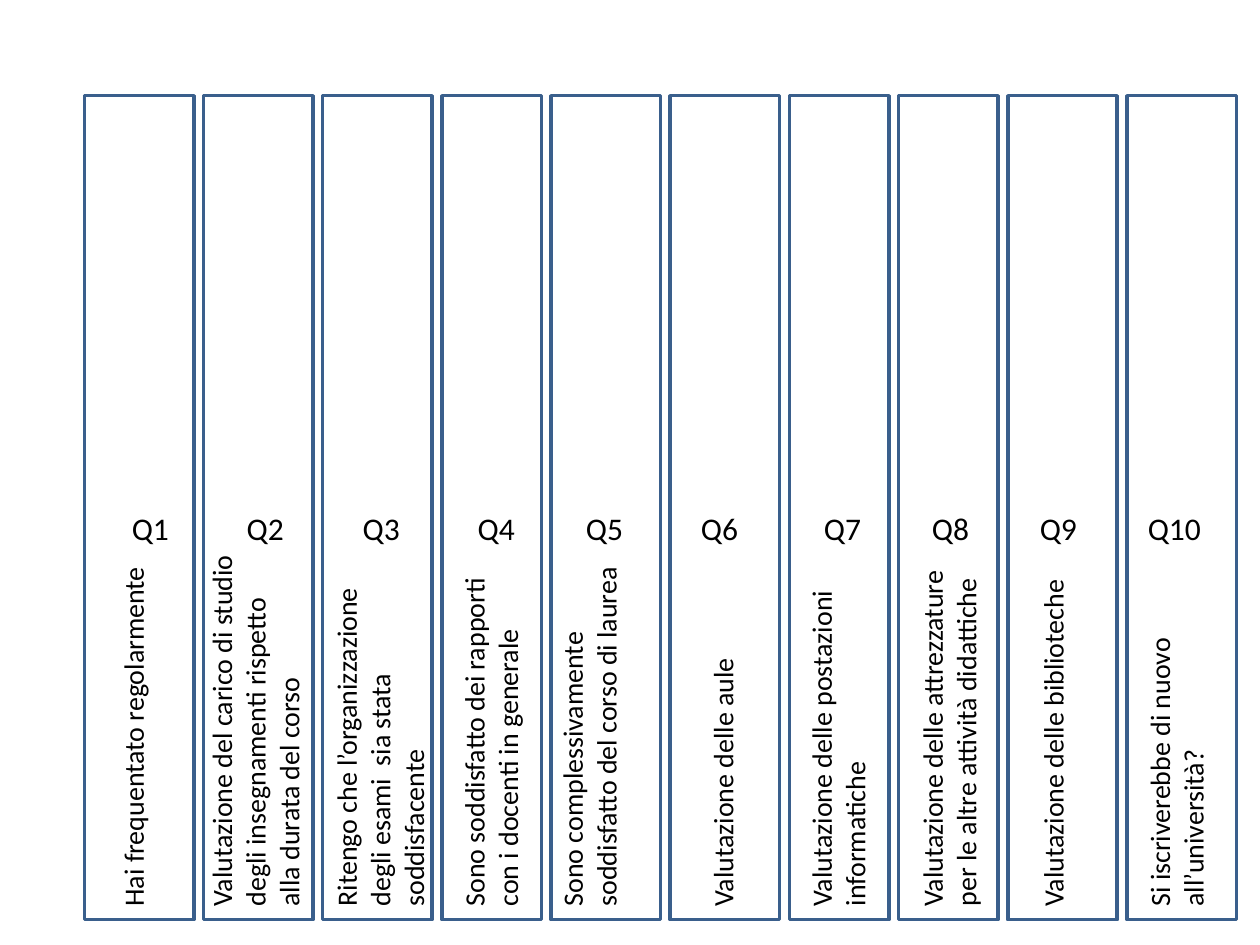
from dataclasses import dataclass

from lxml import etree
from pptx import Presentation
from pptx.dml.color import RGBColor
from pptx.enum.shapes import MSO_SHAPE
from pptx.enum.text import MSO_ANCHOR, PP_ALIGN
from pptx.oxml.ns import qn
from pptx.util import Pt

RECTANGLE = MSO_SHAPE.RECTANGLE
TOP, MIDDLE = MSO_ANCHOR.TOP, MSO_ANCHOR.MIDDLE
LEFT = PP_ALIGN.LEFT


@dataclass(frozen=True)
class Theme:
    font: str = "Calibri"
    text: RGBColor = RGBColor(0, 0, 0)
    paper: RGBColor = RGBColor(255, 255, 255)
    frame: RGBColor = RGBColor(0x3A, 0x5F, 0x8C)
    frame_width: float = 2
    question_size: float = 16
    code_size: float = 18
    line_height: float = 19.4
    inset: float = 7.2


THEME = Theme()
WIDE, NARROW, GAP = 62.6, 56.9, 5.5
COLUMNS_LEFT, COLUMNS_TOP, COLUMNS_HEIGHT = 48.2, 54.7, 470.9
CODES_TOP, CODES_HEIGHT = 287.3, 28.8
QUESTIONS_BOTTOM = 525

# column width, start of the code, question, lines, centre of the question, its length
COLUMNS = [
    (WIDE, 75.4, "Hai frequentato regolarmente", 1, 76, 232.6),
    (WIDE, 141.1, "Valutazione del carico di studio degli insegnamenti rispetto "
     "alla durata del corso", 3, 145.8, 215.3),
    (WIDE, 207.4, "Ritengo che l’organizzazione degli esami  sia stata soddisfacente",
     3, 217.1, 221),
    (NARROW, 273.1, "Sono soddisfatto dei rapporti con i docenti in generale",
     2, 280.4, 203.8),
    (WIDE, 334.9, "Sono complessivamente soddisfatto del corso di laurea",
     2, 336.6, 209.5),
    (WIDE, 400.6, "Valutazione delle aule", 1, 412.9, 215.3),
    (NARROW, 470.9, "Valutazione delle postazioni informatiche", 2, 478.8, 207.4),
    (NARROW, 532.6, "Valutazione delle attrezzature per le altre attività didattiche",
     2, 542.2, 216),
    (WIDE, 594.3, "Valutazione delle biblioteche", 1, 601.6, 232.6),
    (WIDE, 656, "Si iscriverebbe di nuovo all’università?", 2, 672.1, 203.8),
]


def write(shape, text, size, anchor):
    frame = shape.text_frame
    frame.word_wrap = True
    frame.vertical_anchor = anchor
    paragraph = frame.paragraphs[0]
    paragraph.alignment = LEFT
    run = paragraph.add_run()
    run.text = text
    run.font.name = THEME.font
    run.font.size = Pt(size)
    run.font.color.rgb = THEME.text
    return paragraph


def add_codes(slide, left, top, width, height):
    """White band with one tab stop for each question code."""
    band = slide.shapes.add_shape(RECTANGLE, Pt(left), Pt(top), Pt(width), Pt(height))
    band.shadow.inherit = False
    band.fill.solid()
    band.fill.fore_color.rgb = THEME.paper
    band.line.fill.background()
    text = "".join(f"\tQ{number}" for number in range(1, len(COLUMNS) + 1))
    paragraph = write(band, text, THEME.code_size, MIDDLE)
    tabs = etree.SubElement(paragraph._p.get_or_add_pPr(), qn("a:tabLst"))
    for _, start, *_ in COLUMNS:
        position = Pt(start - left - THEME.inset)
        etree.SubElement(tabs, qn("a:tab"), pos=str(int(position)), algn="l")


def add_frame(slide, left, top, width, height):
    frame = slide.shapes.add_shape(RECTANGLE, Pt(left), Pt(top), Pt(width), Pt(height))
    frame.shadow.inherit = False
    frame.fill.background()
    frame.line.color.rgb = THEME.frame
    frame.line.width = Pt(THEME.frame_width)


def add_question(slide, text, lines, centre, bottom, length):
    """Text that reads upwards from the bottom, around a vertical centre line."""
    depth = lines * THEME.line_height + THEME.inset
    middle = bottom - length / 2
    box = slide.shapes.add_textbox(Pt(centre - length / 2), Pt(middle - depth / 2),
                                   Pt(length), Pt(depth))
    box.rotation = 270
    write(box, text, THEME.question_size, TOP)


def main():
    presentation = Presentation()
    presentation.slide_width, presentation.slide_height = Pt(720), Pt(540)
    slide = presentation.slides.add_slide(presentation.slide_layouts[6])

    total = sum(column[0] for column in COLUMNS) + GAP * (len(COLUMNS) - 1)
    add_codes(slide, COLUMNS_LEFT, CODES_TOP, total, CODES_HEIGHT)
    left = COLUMNS_LEFT
    for width, _, question, lines, centre, length in COLUMNS:
        add_frame(slide, left, COLUMNS_TOP, width, COLUMNS_HEIGHT)
        add_question(slide, question, lines, centre, QUESTIONS_BOTTOM, length)
        left += width + GAP
    presentation.save("out.pptx")


if __name__ == "__main__":
    main()
